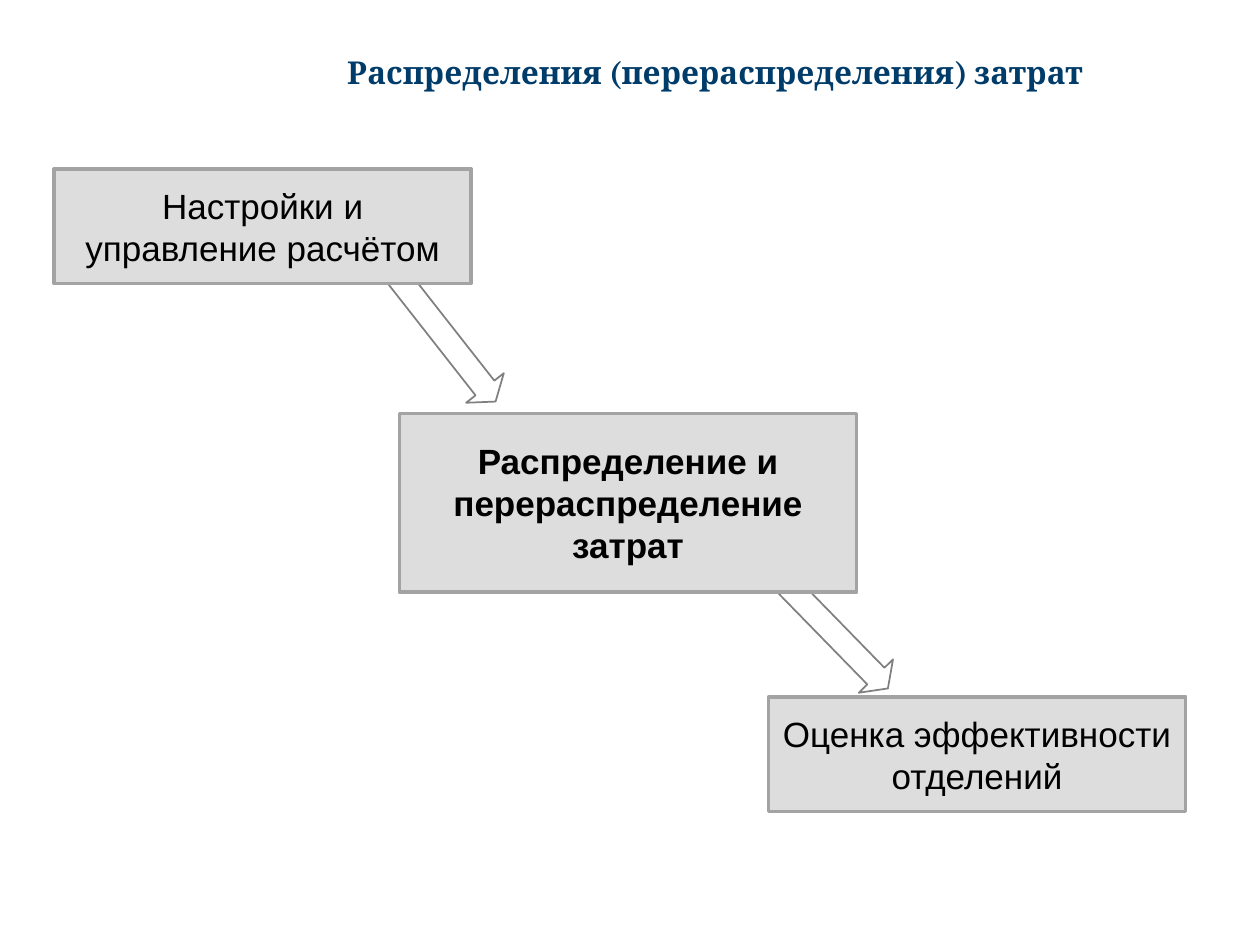
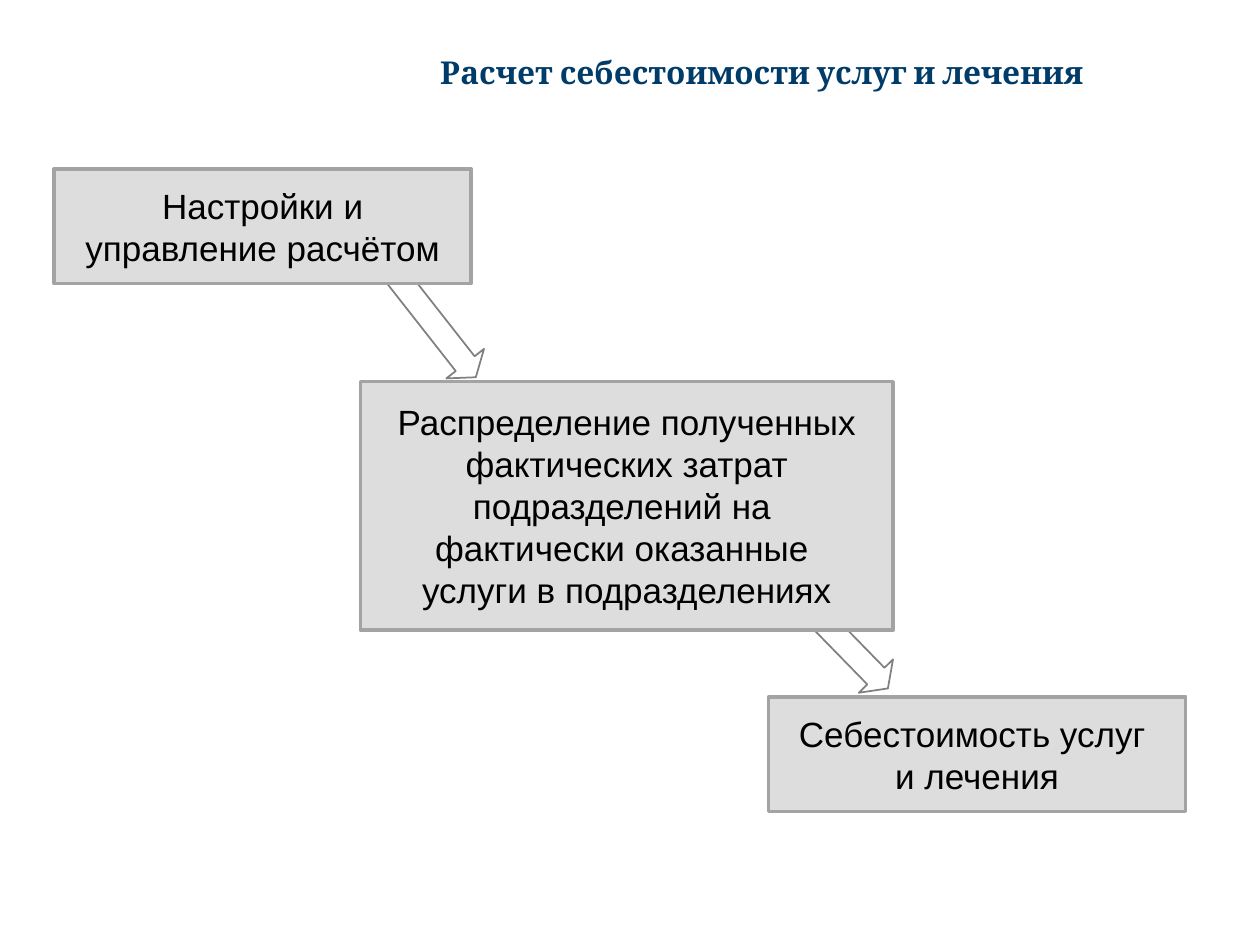
from pptx import Presentation
from pptx.dml.color import RGBColor
from pptx.enum.shapes import MSO_SHAPE as SHAPE
from pptx.enum.text import MSO_ANCHOR as ANCHOR, PP_ALIGN as ALIGN
from pptx.util import Inches, Pt

NAVY, BLACK, WHITE = "003C69", "000000", "FFFFFF"
BOX_FILL, BOX_LINE, ARROW_LINE = "DDDDDD", "A3A3A3", "808080"
TITLE_FONT = {"name": "Cambria", "size": Pt(18), "bold": True}
BOX_FONT = {"name": "Arial", "size": Pt(20), "bold": False}

TITLE_AT = (0.5, 0.3, 8.2, 0.54)
SETTINGS_AT = (0.43, 1.34, 3.31, 0.91)
RESULT_AT = (6.1, 5.53, 3.31, 0.91)
RESULT_ARROW_AT = (6.4, 4.34, 0.38, 1.31)
SETTINGS_TURN, RESULT_TURN = 321.9, 315.7
SETTINGS_TEXT = ["Настройки и управление расчётом"]

FLOWS = [
    {
        "title": "Распределения (перераспределения) затрат",
        "arrow_at": (3.33, 1.99, 0.38, 1.34),
        "step_at": (3.17, 3.28, 3.63, 1.42),
        "step": ["Распределение и перераспределение затрат"],
        "step_bold": True,
        "result": ["Оценка эффективности отделений"],
    },
    {
        "title": "Расчет себестоимости услуг и лечения",
        "arrow_at": (3.25, 2.02, 0.38, 1.09),
        "step_at": (2.86, 3.03, 4.23, 1.97),
        "step": [
            "Распределение полученных фактических затрат подразделений на ",
            "фактически оказанные ",
            "услуги в подразделениях",
        ],
        "step_bold": False,
        "result": ["Себестоимость услуг ", "и лечения"],
    },
]


def color(hex_code):
    """Return the colour for a hex string."""
    return RGBColor.from_string(hex_code)


def inches(at):
    """Convert left, top, width and height to lengths."""
    return [Inches(value) for value in at]


def write(sp, lines, font, hex_code, align):
    """Fill a shape with one formatted paragraph per line."""
    tf = sp.text_frame
    tf.word_wrap = True
    tf.vertical_anchor = ANCHOR.MIDDLE
    for i, line in enumerate(lines):
        p = tf.add_paragraph() if i else tf.paragraphs[0]
        p.alignment = align
        r = p.add_run()
        r.text = line
        for name, value in font.items():
            setattr(r.font, name, value)
        r.font.color.rgb = color(hex_code)


def add_title(s, text):
    """Add the right-aligned slide title."""
    sp = s.shapes.add_textbox(*inches(TITLE_AT))
    write(sp, [text], TITLE_FONT, NAVY, ALIGN.RIGHT)


def add_outlined(s, kind, at, fill, line, width):
    """Add a filled preset shape with an outline and no shadow."""
    sp = s.shapes.add_shape(kind, *inches(at))
    sp.shadow.inherit = False
    sp.fill.solid()
    sp.fill.fore_color.rgb = color(fill)
    sp.line.color.rgb = color(line)
    sp.line.width = Pt(width)
    return sp


def add_box(s, at, lines, bold=False):
    """Add a grey process box with centred text."""
    sp = add_outlined(s, SHAPE.RECTANGLE, at, BOX_FILL, BOX_LINE, 2)
    write(sp, lines, {**BOX_FONT, "bold": bold}, BLACK, ALIGN.CENTER)


def add_arrow(s, at, turn):
    """Add a block arrow turned towards the next box."""
    sp = add_outlined(s, SHAPE.DOWN_ARROW, at, WHITE, ARROW_LINE, 1)
    sp.adjustments[0] = 0.5
    sp.adjustments[1] = 0.36
    sp.rotation = turn


def add_flow(prs, flow):
    """Add a slide with three boxes joined by arrows."""
    s = prs.slides.add_slide(prs.slide_layouts[6])
    add_title(s, flow["title"])
    add_arrow(s, flow["arrow_at"], SETTINGS_TURN)
    add_arrow(s, RESULT_ARROW_AT, RESULT_TURN)
    add_box(s, flow["step_at"], flow["step"], flow["step_bold"])
    add_box(s, SETTINGS_AT, SETTINGS_TEXT)
    add_box(s, RESULT_AT, flow["result"])


def main():
    """Build and save the presentation."""
    prs = Presentation()
    prs.slide_width, prs.slide_height = Inches(10), Inches(7.5)
    for flow in FLOWS:
        add_flow(prs, flow)
    prs.save("out.pptx")


if __name__ == "__main__":
    main()
